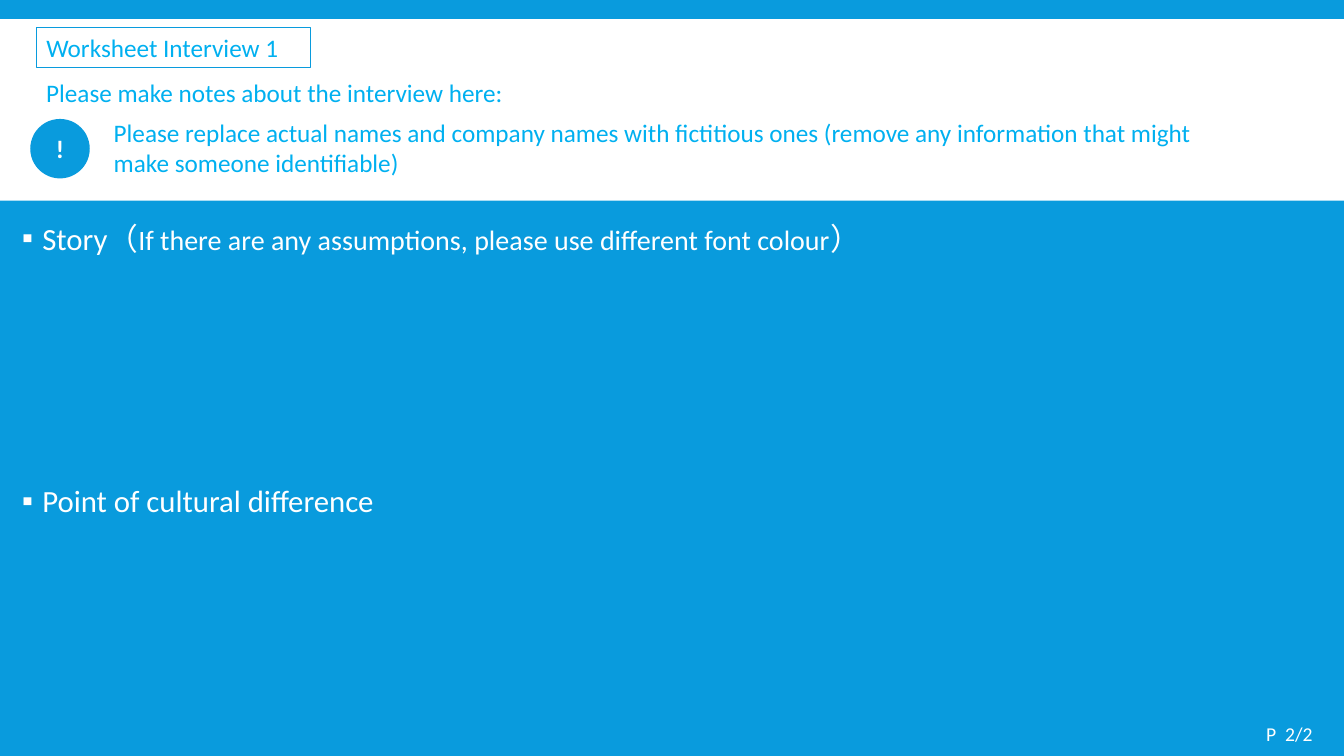
from dataclasses import dataclass

from lxml.etree import SubElement
from pptx import Presentation
from pptx.dml.color import RGBColor
from pptx.enum.shapes import MSO_SHAPE as Shape
from pptx.enum.text import MSO_ANCHOR as Anchor, MSO_AUTO_SIZE as AutoSize, PP_ALIGN as Align
from pptx.oxml.ns import qn
from pptx.util import Inches, Pt


@dataclass(frozen=True)
class Theme:
    font: str = "Calibri"
    blue: RGBColor = RGBColor(0x09, 0x9B, 0xDD)
    accent: RGBColor = RGBColor(0x00, 0xB0, 0xF0)
    white: RGBColor = RGBColor(0xFF, 0xFF, 0xFF)
    heading: int = 22
    hint: int = 20
    text: int = 18
    page: int = 14


THEME = Theme()


def place(sp, left, top, width, height):
    sp.left, sp.top = Inches(left), Inches(top)
    sp.width, sp.height = Inches(width), Inches(height)


def format_run(r, size, color, bold=False):
    r.font.name = THEME.font
    r.font.size = Pt(size)
    r.font.color.rgb = color
    r.font.bold = bold


def write(sp, text, size, color, align=Align.LEFT, anchor=Anchor.TOP, bold=False):
    tf = sp.text_frame
    tf.text = text
    tf.word_wrap = True
    tf.auto_size = AutoSize.NONE
    tf.vertical_anchor = anchor
    p = tf.paragraphs[0]
    p.alignment = align
    format_run(p.runs[0], size, color, bold)
    return p


def add_shape(s, kind, box, fill):
    sp = s.shapes.add_shape(kind, *map(Inches, box))
    sp.shadow.inherit = False
    sp.fill.solid()
    sp.fill.fore_color.rgb = fill
    sp.line.fill.background()
    return sp


def add_text(s, box, text, size, color):
    sp = s.shapes.add_textbox(*map(Inches, box))
    write(sp, text, size, color)
    return sp


def fill_title(sp, box, text):
    place(sp, *box)
    write(sp, text, THEME.text, THEME.accent)
    sp.line.color.rgb = THEME.blue
    sp.line.width = Pt(0.75)


def fill_list(sp, box, text):
    place(sp, *box)
    p = write(sp, text, THEME.heading, THEME.white)
    p.line_spacing = 0.9
    p.space_before = Pt(0)
    pPr = p._p.get_or_add_pPr()
    pPr.set("marL", str(Inches(0.2)))
    pPr.set("indent", str(Inches(-0.2)))
    color = SubElement(pPr, qn("a:buClr"))
    SubElement(color, qn("a:srgbClr"), val=str(THEME.white))
    SubElement(pPr, qn("a:buFont"), typeface=THEME.font)
    SubElement(pPr, qn("a:buChar"), char="▪")
    return p


def append_run(p, text, size):
    r = p.add_run()
    r.text = text
    format_run(r, size, THEME.white)


def main():
    prs = Presentation()
    prs.slide_width, prs.slide_height = Inches(13.33), Inches(7.5)
    s = prs.slides.add_slide(prs.slide_layouts[3])
    s.background.fill.solid()
    s.background.fill.fore_color.rgb = THEME.blue
    title, story, difference = s.placeholders

    band = add_shape(s, Shape.RECTANGLE, (0, 0.19, 13.33, 1.8), THEME.white)
    s.shapes.element.insert(2, band.element)

    fill_title(title, (0.36, 0.27, 2.72, 0.4), "Worksheet Interview 1")
    p = fill_list(story, (0.12, 2.17, 10.7, 2), "Story（")
    append_run(p, "If there are any assumptions, please use different font colour", THEME.hint)
    append_run(p, "）", THEME.heading)
    fill_list(difference, (0.12, 4.77, 11.74, 2), "Point of cultural difference")

    add_text(s, (0.36, 0.72, 4.87, 0.4), "Please make notes about the interview here:",
             THEME.text, THEME.accent)
    add_text(s, (1.03, 1.11, 11.14, 0.71),
             "Please replace actual names and company names with fictitious ones "
             "(remove any information that might make someone identifiable)",
             THEME.text, THEME.accent)
    badge = add_shape(s, Shape.OVAL, (0.3, 1.18, 0.59, 0.59), THEME.blue)
    write(badge, "!", THEME.text, THEME.white, Align.CENTER, Anchor.MIDDLE, bold=True)

    page = add_text(s, (12.46, 7.06, 0.87, 0.44), "P  2/2", THEME.page, THEME.white)
    page.text_frame.margin_top = page.text_frame.margin_bottom = Inches(0.1)

    prs.save("out.pptx")


if __name__ == "__main__":
    main()
